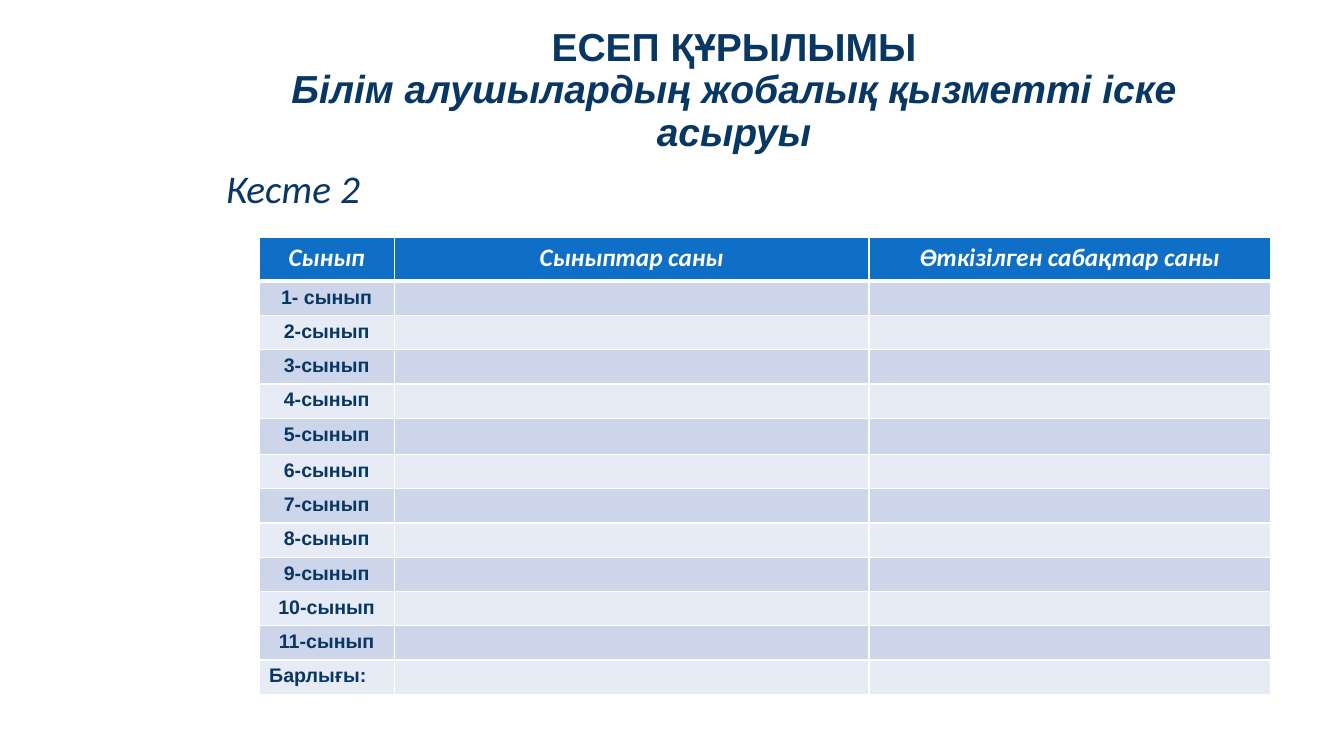
from lxml import etree
from pptx import Presentation
from pptx.dml.color import RGBColor
from pptx.enum import text
from pptx.oxml import ns
from pptx.util import Inches, Pt

NAVY = "083763"
WHITE = "FFFFFF"
HEADER_FILL = "0F6FC6"
BAND_FILLS = ("CCD5EA", "E7EBF5")
HEADERS = ("Сынып", "Сыныптар саны", "Өткізілген сабақтар саны")
GRADES = ["1- сынып"] + [f"{grade}-сынып" for grade in range(2, 12)]
TOTAL = "Барлығы:"
COLUMN_WIDTHS = (1.34, 4.71, 3.98)
CENTER = text.PP_ALIGN.CENTER
LEFT = text.PP_ALIGN.LEFT


def color(value):
    return RGBColor.from_string(value)


def place(shape, left, top, width, height):
    shape.left, shape.top = Inches(left), Inches(top)
    shape.width, shape.height = Inches(width), Inches(height)


def set_font(font, name, size, value, bold=False, italic=False):
    font.name, font.size = name, Pt(size)
    font.bold, font.italic = bold, italic
    font.color.rgb = color(value)


def add_title(slide):
    title = slide.shapes.title
    place(title, 2.14, 0.4, 10.28, 1.45)
    frame = title.text_frame
    frame.auto_size = text.MSO_AUTO_SIZE.NONE
    frame.vertical_anchor = text.MSO_ANCHOR.MIDDLE
    frame.margin_bottom = Inches(0.49)
    paragraph = frame.paragraphs[0]
    paragraph.alignment = CENTER
    paragraph.line_spacing = 0.9
    heading = paragraph.add_run()
    heading.text = "ЕСЕП ҚҰРЫЛЫМЫ"
    paragraph.add_line_break()
    subject = paragraph.add_run()
    subject.text = "Білім алушылардың жобалық қызметті іске асыруы"
    set_font(heading.font, "Arial", 27.9, NAVY, bold=True)
    set_font(subject.font, "Arial", 27.9, NAVY, bold=True, italic=True)


def add_caption(slide):
    body = slide.placeholders[1]
    place(body, 2.14, 1.63, 11.5, 4.91)
    body.text_frame.text = "Кесте 2"
    paragraph = body.text_frame.paragraphs[0]
    properties = paragraph._p.get_or_add_pPr()
    properties.set("marL", "0")
    properties.set("indent", "0")
    etree.SubElement(properties, ns.qn("a:buNone"))
    paragraph.space_before = Pt(0)
    paragraph.line_spacing = 0.9
    set_font(paragraph.font, "Calibri", 28, NAVY, italic=True)


def add_borders(cell, bottom):
    properties = cell._tc.get_or_add_tcPr()
    for side, points in (("L", 1), ("R", 1), ("T", 1), ("B", bottom)):
        line = etree.SubElement(properties, ns.qn(f"a:ln{side}"), w=str(Pt(points)))
        fill = etree.SubElement(line, ns.qn("a:solidFill"))
        etree.SubElement(fill, ns.qn("a:srgbClr"), val=WHITE)


def style_cell(cell, fill, bottom=1):
    add_borders(cell, bottom)
    cell.fill.solid()
    cell.fill.fore_color.rgb = color(fill)


def write_cell(cell, words, alignment, *font):
    cell.text = words
    paragraph = cell.text_frame.paragraphs[0]
    paragraph.alignment = alignment
    set_font(paragraph.font, *font)


def add_grade_table(slide):
    labels = GRADES + [TOTAL]
    table = slide.shapes.add_table(
        len(labels) + 1, len(HEADERS),
        Inches(2.57), Inches(2.36), Inches(10.03), Inches(4.53)).table
    for column, width in zip(table.columns, COLUMN_WIDTHS):
        column.width = Inches(width)
    table.rows[0].height = Inches(0.43)
    for index, header in enumerate(HEADERS):
        cell = table.cell(0, index)
        style_cell(cell, HEADER_FILL, 3)
        write_cell(cell, header, CENTER, "Calibri", 18, WHITE, True, True)
    for row, label in enumerate(labels, 1):
        table.rows[row].height = Inches(0.36 if label == "5-сынып" else 0.34)
        for column in range(len(HEADERS)):
            cell = table.cell(row, column)
            style_cell(cell, BAND_FILLS[(row - 1) % 2])
            if column:
                cell.margin_top = cell.margin_bottom = Inches(0.01)
        alignment = LEFT if label == TOTAL else CENTER
        write_cell(table.cell(row, 0), label, alignment, "Arial", 14, NAVY, True)


def main():
    presentation = Presentation()
    presentation.slide_width = Inches(13.33)
    presentation.slide_height = Inches(7.5)
    slide = presentation.slides.add_slide(presentation.slide_layouts[1])
    add_title(slide)
    add_caption(slide)
    add_grade_table(slide)
    presentation.save("out.pptx")


if __name__ == "__main__":
    main()
